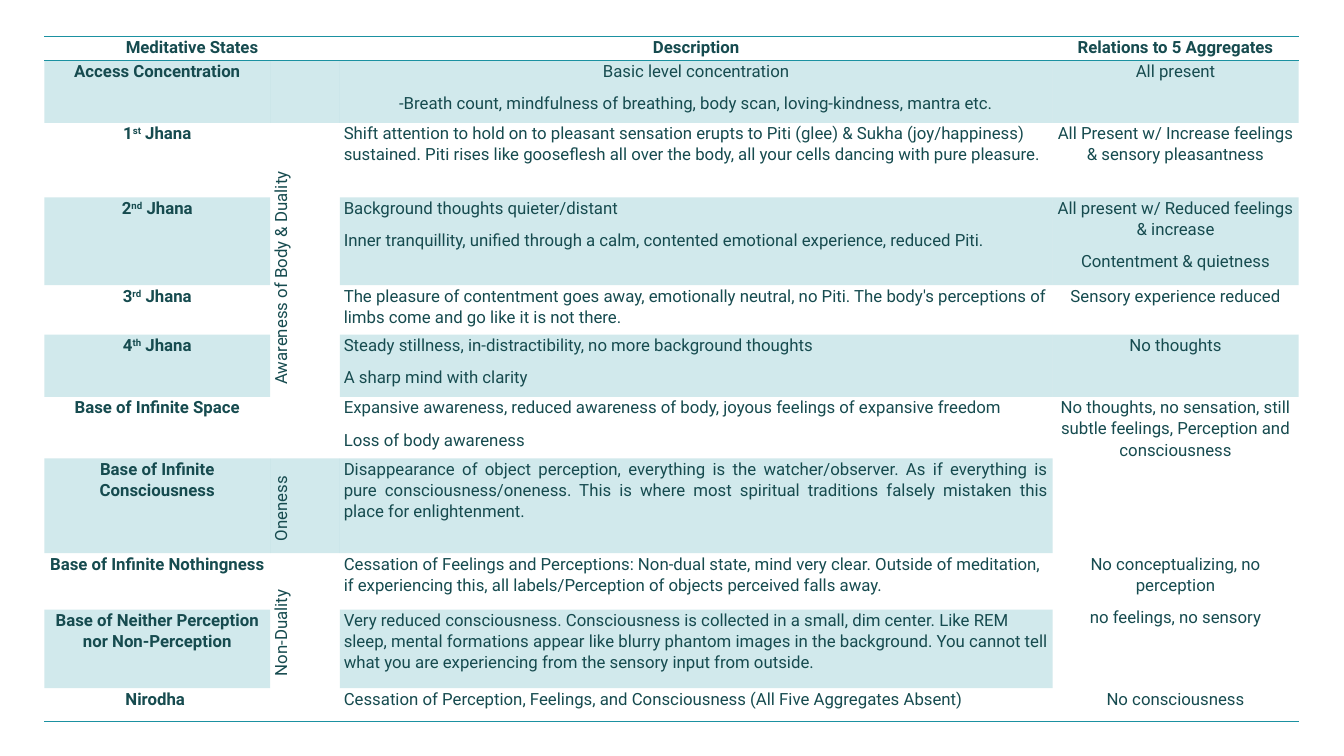
from dataclasses import dataclass
from lxml.etree import SubElement
from pptx import Presentation
from pptx.dml.color import RGBColor as Rgb
from pptx.enum.text import PP_ALIGN as Align
from pptx.oxml import parse_xml
from pptx.oxml.ns import nsdecls, qn
from pptx.util import Inches, Pt


@dataclass(frozen=True)
class Theme:
    font: str = "Roboto"
    size: int = 12
    ink: str = "164B4F"
    teal: str = "1B91A1"
    tint: int = 20
    rule: int = 1


THEME = Theme()

# A new line starts a paragraph; text between ^ marks is raised.
ROWS = [
    ("Meditative States", "", "Description", "Relations to 5 Aggregates"),
    ("Access Concentration", "",
     "Basic level concentration\n"
     "-Breath count, mindfulness of breathing, body scan, loving-kindness, mantra etc.",
     "All present"),
    ("1^st^ Jhana", "Awareness of Body & Duality",
     "Shift attention to hold on to pleasant sensation erupts to Piti (glee) & Sukha "
     "(joy/happiness) sustained. Piti rises like gooseflesh all over the body, all your "
     "cells dancing with pure pleasure.",
     "All Present w/ Increase feelings & sensory pleasantness"),
    ("2^nd^ Jhana", "",
     "Background thoughts quieter/distant\n"
     "Inner tranquillity, unified through a calm, contented emotional experience, "
     "reduced Piti.",
     "All present w/ Reduced feelings & increase\nContentment & quietness"),
    ("3^rd^ Jhana", "",
     "The pleasure of contentment goes away, emotionally neutral, no Piti. The body's "
     "perceptions of limbs come and go like it is not there.",
     "Sensory experience reduced"),
    ("4^th^ Jhana", "",
     "Steady stillness, in-distractibility, no more background thoughts\n"
     "A sharp mind with clarity",
     "No thoughts"),
    ("Base of Infinite Space", "",
     "Expansive awareness, reduced awareness of body, joyous feelings of expansive "
     "freedom\nLoss of body awareness",
     "No thoughts, no sensation, still subtle feelings, Perception and consciousness"),
    ("Base of Infinite Consciousness", "Oneness",
     "Disappearance of object perception, everything is the watcher/observer. As if "
     "everything is pure consciousness/oneness. This is where most spiritual traditions "
     "falsely mistaken this place for enlightenment. ",
     ""),
    ("Base of Infinite Nothingness", "Non-Duality",
     "Cessation of Feelings and Perceptions: Non-dual state, mind very clear. Outside of "
     "meditation, if experiencing this, all labels/Perception of objects perceived falls "
     "away.",
     "No conceptualizing, no perception\nno feelings, no sensory"),
    ("Base of Neither Perception nor Non-Perception", "",
     "Very reduced consciousness. Consciousness is collected in a small, dim center. Like "
     "REM sleep, mental formations appear like blurry phantom images in the background. "
     "You cannot tell what you are experiencing from the sensory input from outside.",
     ""),
    ("Nirodha ", "",
     "Cessation of Perception, Feelings, and Consciousness (All Five Aggregates Absent)",
     "No consciousness"),
]
WIDTHS = [2.24, 0.69, 7.07, 2.44]
HEIGHTS = [0.24, 0.62, 0.74, 0.87, 0.49, 0.62, 0.61, 0.94, 0.56, 0.78, 0.33]
LEFT, TOP = 0.44, 0.36
STATE, PHASE, ABOUT, LINK = range(4)
LAST = len(ROWS) - 1

# First and last cell of each merged block
SPANS = [((0, STATE), (0, PHASE)), ((2, PHASE), (5, PHASE)), ((6, LINK), (7, LINK)),
         ((8, PHASE), (9, PHASE)), ((8, LINK), (9, LINK))]
ALIGNS = {STATE: Align.CENTER, PHASE: Align.LEFT, ABOUT: Align.LEFT, LINK: Align.CENTER}
SPECIAL = {(0, ABOUT): Align.CENTER, (1, ABOUT): Align.CENTER,
           (7, PHASE): Align.JUSTIFY, (7, ABOUT): Align.JUSTIFY}
PLAIN = "{2D5ABB26-0587-4C30-8999-92F81FD0307C}"  # no style, no grid

INSETS = {"margin_left": Inches(0.04), "margin_right": Inches(0.04),
          "margin_top": 0, "margin_bottom": 0}
SPACING = {"line_spacing": 1.07, "space_after": Pt(8)}
TYPE = {"name": THEME.font, "size": Pt(THEME.size)}


def apply(item, values):
    for name, value in values.items():
        setattr(item, name, value)


def write(cell, text, align, bold, turned):
    frame = cell.text_frame
    for i, line in enumerate(text.split("\n")):
        para = frame.add_paragraph() if i else frame.paragraphs[0]
        apply(para, SPACING | {"alignment": align})
        if turned:
            apply_indent = para._p.get_or_add_pPr()
            apply_indent.set("marL", str(Inches(0.08)))
            apply_indent.set("indent", "0")
        if not line:
            SubElement(para._p, qn("a:endParaRPr"), sz=str(THEME.size * 100))
            continue
        for j, part in enumerate(line.split("^")):
            run = para.add_run()
            run.text = part
            apply(run.font, TYPE | {"bold": bold})
            run.font.color.rgb = Rgb.from_string(THEME.ink)
            if j % 2:
                run.font._element.set("baseline", "30000")


def shade(cell):
    cell.fill.solid()
    cell.fill.fore_color.rgb = Rgb.from_string(THEME.teal)
    color = cell._tc.tcPr.find(qn("a:solidFill"))[0]
    SubElement(color, qn("a:alpha"), val=str(THEME.tint * 1000))


def edge(cell, side):
    cell._tc.get_or_add_tcPr().insert(0, parse_xml(
        f'<a:ln{side} {nsdecls("a")} w="{Pt(THEME.rule)}"><a:solidFill>'
        f'<a:srgbClr val="{THEME.teal}"/></a:solidFill></a:ln{side}>'))


def style(cell, row, col, text):
    apply(cell, INSETS)
    turned = col == PHASE and bool(text)
    align = SPECIAL.get((row, col), ALIGNS[col])
    if not cell.is_spanned or not text:
        write(cell, text, align, row == 0 or col == STATE, turned)
    if turned:
        cell._tc.get_or_add_tcPr().set("vert", "vert270")
    if row % 2 and not cell.is_spanned:
        shade(cell)
    else:
        cell.fill.background()
    if row in (0, LAST):
        edge(cell, "B")
    if row == 0:
        edge(cell, "T")


def main():
    deck = Presentation()
    deck.slide_width, deck.slide_height = Inches(13.33), Inches(7.5)
    slide = deck.slides.add_slide(deck.slide_layouts[6])
    frame = slide.shapes.add_table(
        len(ROWS), len(WIDTHS), Inches(LEFT), Inches(TOP),
        Inches(sum(WIDTHS)), Inches(sum(HEIGHTS)))
    table = frame.table
    apply(table, {"first_row": False, "horz_banding": False})
    table._tbl.tblPr.find(qn("a:tableStyleId")).text = PLAIN
    for column, width in zip(table.columns, WIDTHS):
        column.width = Inches(width)
    for line, height in zip(table.rows, HEIGHTS):
        line.height = Inches(height)
    for start, end in SPANS:
        table.cell(*start).merge(table.cell(*end))
    for row, texts in enumerate(ROWS):
        for col, text in enumerate(texts):
            style(table.cell(row, col), row, col, text)
    deck.save("out.pptx")


if __name__ == "__main__":
    main()
